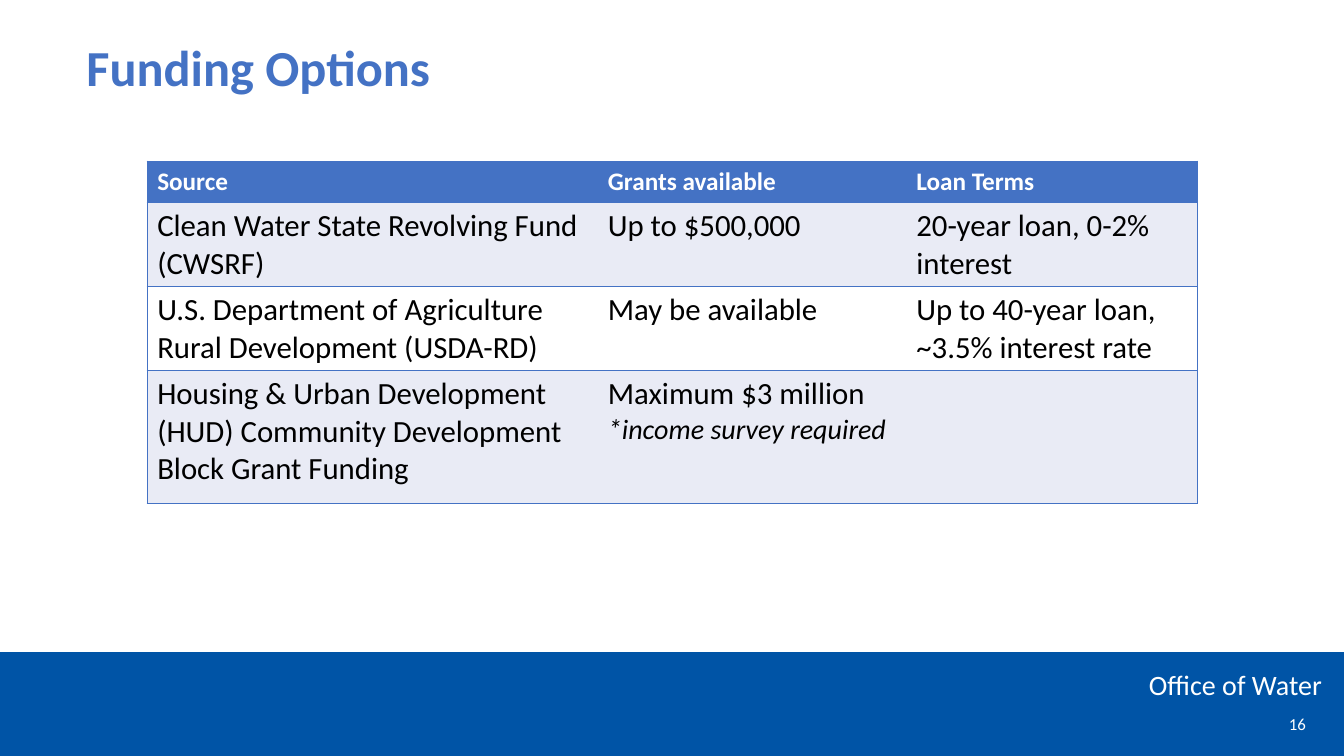
from lxml import etree
from pptx import Presentation
from pptx.dml.color import RGBColor
from pptx.enum import shapes, text
from pptx.oxml import ns
from pptx.util import Inches, Pt

COLORS = {
    "band": "0054A6",
    "accent": "4472C4",
    "stripe": "E9EBF5",
    "white": "FFFFFF",
    "black": "000000",
}
FONT = "Calibri"
TITLE = "Funding Options"
OFFICE = "Office of Water"
PAGE_NUMBER = "16"
FUNDING = [
    ("Source", "Grants available", "Loan Terms"),
    ("Clean Water State Revolving Fund (CWSRF)", "Up to $500,000",
     "20-year loan, 0-2% interest"),
    ("U.S. Department of Agriculture Rural Development (USDA-RD)",
     "May be available", "Up to 40-year loan, ~3.5% interest rate"),
    ("Housing & Urban Development (HUD) Community Development Block Grant Funding",
     "Maximum $3 million\n*income survey required", ""),
]
COLUMN_WIDTHS = [4.47, 3.06, 2.89]
ROW_HEIGHTS = [0.41, 0.83, 0.83, 1.32]


def rgb(name):
    return RGBColor.from_string(COLORS[name])


def style(font, size, color, bold=False, italic=False):
    font.name = FONT
    font.size = Pt(size)
    font.bold = bold
    font.italic = italic
    font.color.rgb = rgb(color)


def add_label(slide, box, words, size, color, bold=False,
              align=text.PP_ALIGN.LEFT, anchor=text.MSO_ANCHOR.TOP):
    frame = slide.shapes.add_textbox(*map(Inches, box)).text_frame
    frame.word_wrap = True
    frame.vertical_anchor = anchor
    frame.text = words
    paragraph = frame.paragraphs[0]
    paragraph.alignment = align
    style(paragraph.runs[0].font, size, color, bold)
    return paragraph


def set_borders(cell, visible_sides):
    properties = cell._tc.get_or_add_tcPr()
    for side in "LRTB":
        line = etree.SubElement(properties, ns.qn(f"a:ln{side}"), w=str(Pt(1)))
        if side in visible_sides:
            fill = etree.SubElement(line, ns.qn("a:solidFill"))
            etree.SubElement(fill, ns.qn("a:srgbClr"), val=COLORS["accent"])
        else:
            etree.SubElement(line, ns.qn("a:noFill"))


def add_funding_table(slide):
    table = slide.shapes.add_table(
        len(ROW_HEIGHTS), len(COLUMN_WIDTHS), Inches(1.46), Inches(1.6),
        Inches(sum(COLUMN_WIDTHS)), Inches(sum(ROW_HEIGHTS))).table
    for column, width in zip(table.columns, COLUMN_WIDTHS):
        column.width = Inches(width)
    for row, height in zip(table.rows, ROW_HEIGHTS):
        row.height = Inches(height)
    last_column = len(COLUMN_WIDTHS) - 1
    for row_index, values in enumerate(FUNDING):
        header = row_index == 0
        background = "accent" if header else ("white", "stripe")[row_index % 2]
        for column_index, value in enumerate(values):
            cell = table.cell(row_index, column_index)
            sides = "TB" + {0: "L", last_column: "R"}.get(column_index, "")
            set_borders(cell, sides)
            cell.fill.solid()
            cell.fill.fore_color.rgb = rgb(background)
            cell.text_frame.text = value
            for paragraph in cell.text_frame.paragraphs:
                for run in paragraph.runs:
                    note = run.text.startswith("*")
                    size = 18 if header else 20 if note else 22
                    style(run.font, size, "white" if header else "black",
                          bold=header, italic=note)


def main():
    presentation = Presentation()
    presentation.slide_width = Inches(13.33)
    presentation.slide_height = Inches(7.5)
    slide = presentation.slides.add_slide(presentation.slide_layouts[6])

    band = slide.shapes.add_shape(
        shapes.MSO_SHAPE.RECTANGLE, 0, Inches(6.47), Inches(13.33), Inches(1.03))
    band.shadow.inherit = False
    band.fill.solid()
    band.fill.fore_color.rgb = rgb("band")
    band.line.fill.background()

    right = text.PP_ALIGN.RIGHT
    add_label(slide, (10.89, 6.57, 2.32, 0.44), OFFICE, 20, "white", align=right)
    add_label(slide, (12.37, 6.98, 0.68, 0.4), PAGE_NUMBER, 12, "white",
              align=right, anchor=text.MSO_ANCHOR.MIDDLE)
    title = add_label(slide, (0.76, 0.38, 11.06, 0.85), TITLE, 36, "accent", bold=True)
    title.line_spacing = 0.9
    add_funding_table(slide)
    presentation.save("out.pptx")


if __name__ == "__main__":
    main()
